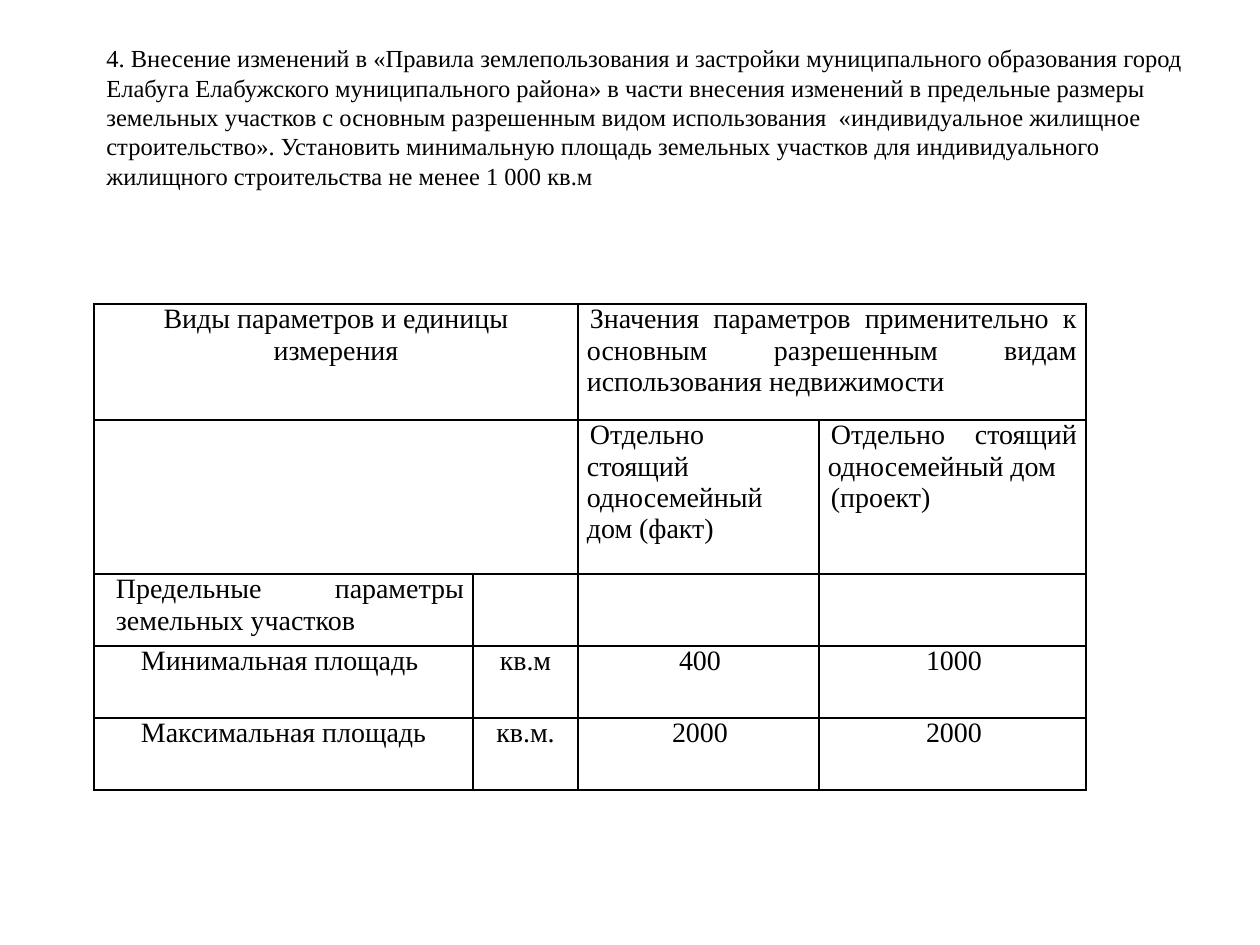
import lxml.etree
import pptx
import pptx.dml.color
import pptx.enum.text
import pptx.oxml.ns
import pptx.util

COLORS = {"text": "000000", "border": "000000"}
PX = 914400 / 126
ALIGN = pptx.enum.text.PP_ALIGN

TITLE = (
    "4. Внесение изменений в «Правила землепользования и застройки "
    "муниципального образования город Елабуга Елабужского муниципального "
    "района» в части внесения изменений в предельные размеры земельных "
    "участков с основным разрешенным видом использования  «индивидуальное "
    "жилищное строительство». Установить минимальную площадь земельных "
    "участков для индивидуального жилищного строительства не менее 1 000 кв.м"
)
COLUMNS = [379, 105, 241, 267]
ROWS = [116, 154, 72, 72, 72]
MERGES = [(0, 0, 1), (0, 2, 3), (1, 0, 1)]
FIRST_LINE = 3
HEADINGS = [
    (0, 0, "Виды параметров и единицы измерения", ALIGN.CENTER, 0, 0),
    (0, 2, "Значения параметров применительно к основным разрешенным видам "
           "использования недвижимости", ALIGN.JUSTIFY, 0, FIRST_LINE),
    (1, 2, "Отдельно стоящий односемейный дом (факт)", ALIGN.JUSTIFY, 0, FIRST_LINE),
    (1, 3, "Отдельно стоящий односемейный дом\n(проект)", ALIGN.JUSTIFY, 0, FIRST_LINE),
    (2, 0, "Предельные параметры земельных участков", ALIGN.JUSTIFY, 13, 0),
]
LIMITS = [
    ("Минимальная площадь", "кв.м", "400", "1000"),
    ("Максимальная площадь", "кв.м.", "2000", "2000"),
]


def px(n):
    return pptx.util.Emu(round(n * PX))


class Deck:
    font = "Times New Roman"

    def __init__(self, width, height):
        self.prs = pptx.Presentation()
        self.prs.slide_width, self.prs.slide_height = px(width), px(height)
        self.s = self.prs.slides.add_slide(self.prs.slide_layouts[6])

    def fill_text(self, tf, text, size, align, left=0, first=0):
        tf.text = text
        for p in tf.paragraphs:
            p.alignment = align
            pPr = p._p.get_or_add_pPr()
            pPr.set("marL", str(px(left)))
            pPr.set("indent", str(px(first)))
            for r in p.runs:
                r.font.name = self.font
                r.font.size = pptx.util.Pt(size)
                r.font.color.rgb = pptx.dml.color.RGBColor.from_string(COLORS["text"])

    def text(self, x, y, w, h, text, size):
        sp = self.s.shapes.add_textbox(px(x), px(y), px(w), px(h))
        sp.text_frame.word_wrap = True
        self.fill_text(sp.text_frame, text, size, ALIGN.LEFT)

    def border(self, cell):
        tcPr = cell._tc.get_or_add_tcPr()
        qn = pptx.oxml.ns.qn
        for side in "LRTB":
            ln = lxml.etree.SubElement(tcPr, qn(f"a:ln{side}"), w=str(pptx.util.Pt(1)))
            fill = lxml.etree.SubElement(ln, qn("a:solidFill"))
            lxml.etree.SubElement(fill, qn("a:srgbClr"), val=COLORS["border"])

    def table(self, x, y, columns, rows, merges):
        frame = self.s.shapes.add_table(
            len(rows), len(columns), px(x), px(y), px(sum(columns)), px(sum(rows)))
        table = frame.table
        table.first_row = table.horz_banding = False
        for column, width in zip(table.columns, columns):
            column.width = px(width)
        for row, height in zip(table.rows, rows):
            row.height = px(height)
        for cell in table.iter_cells():
            self.border(cell)
            cell.fill.background()
            cell.margin_left = cell.margin_right = px(9)
            cell.margin_top = cell.margin_bottom = 0
        for row, start, end in merges:
            table.cell(row, start).merge(table.cell(row, end))
        return table

    def cell(self, table, row, column, text, align, left=0, first=0):
        self.fill_text(table.cell(row, column).text_frame, text, 16, align, left, first)


def main():
    deck = Deck(1260, 945)
    table = deck.table(94, 304, COLUMNS, ROWS, MERGES)
    for heading in HEADINGS:
        deck.cell(table, *heading)
    for row, (name, unit, *values) in enumerate(LIMITS, 3):
        deck.cell(table, row, 0, name, ALIGN.JUSTIFY, 38)
        deck.cell(table, row, 1, unit, ALIGN.CENTER)
        for column, value in enumerate(values, 2):
            deck.cell(table, row, column, value, ALIGN.CENTER, 0, FIRST_LINE)
    deck.text(94, 37, 1111, 161, TITLE, 14)
    deck.prs.save("out.pptx")


if __name__ == "__main__":
    main()
